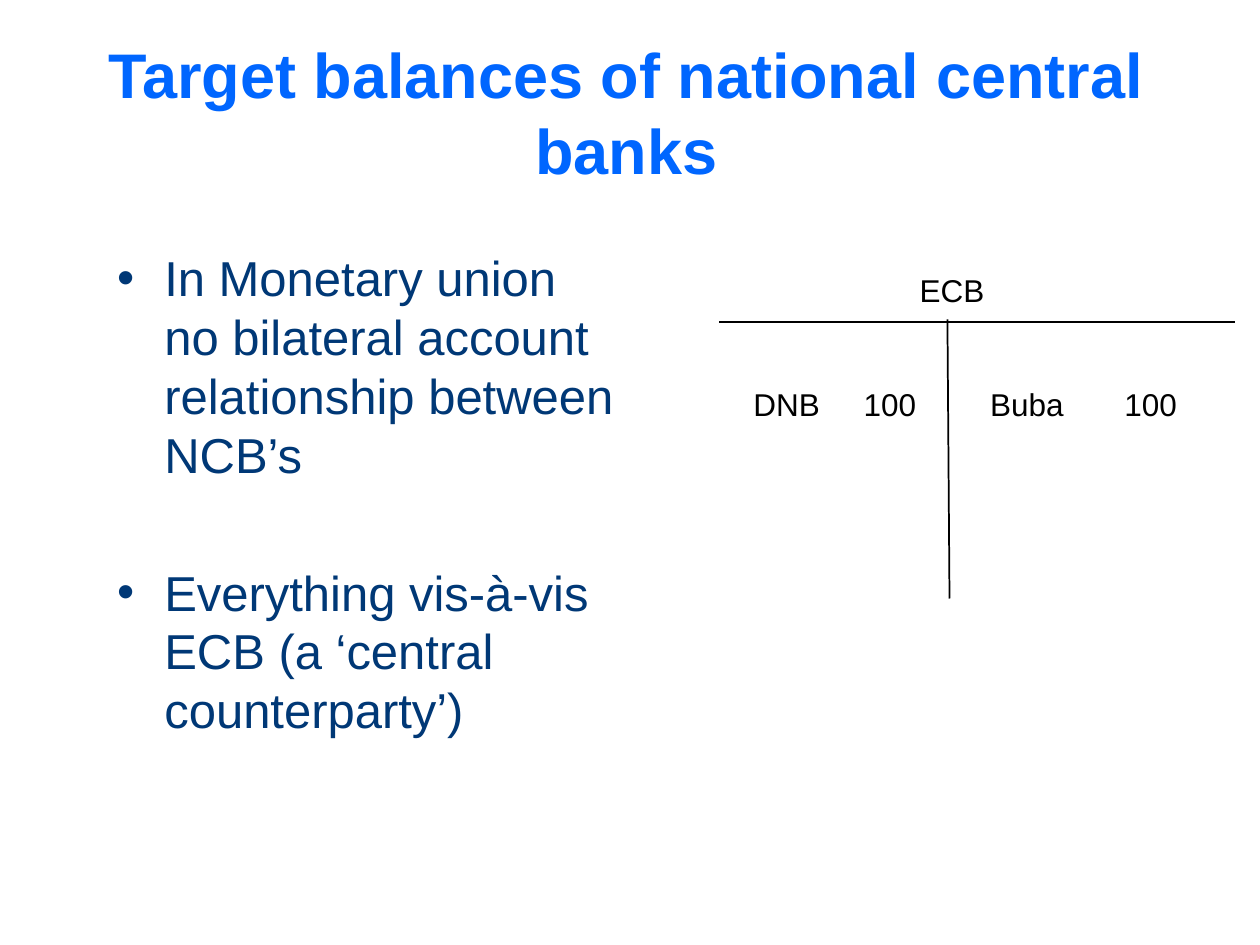
from lxml import etree
from pptx import Presentation
from pptx.dml.color import RGBColor
from pptx.enum import shapes, text
from pptx.oxml import ns
from pptx.util import Pt

COLORS = {"title": "0066FF", "body": "003876", "ink": "000000"}
FONT = "Arial"


def place(shape, left, top, width, height):
    """Set the position and size of a shape in points."""
    shape.left, shape.top = Pt(left), Pt(top)
    shape.width, shape.height = Pt(width), Pt(height)


def add_run(paragraph, words, size, color, bold=False):
    """Append one formatted run to a paragraph."""
    run = paragraph.add_run()
    run.text = words
    run.font.name = FONT
    run.font.size = Pt(size)
    run.font.bold = bold
    run.font.color.rgb = RGBColor.from_string(COLORS[color])


def add_title(slide, words):
    """Fill the title placeholder, keeping its text in the upper part."""
    title = slide.shapes.title
    place(title, 54, 43.2, 607.7, 80.6)
    frame = title.text_frame
    frame.word_wrap = True
    frame.auto_size = text.MSO_AUTO_SIZE.NONE
    frame.vertical_anchor = text.MSO_ANCHOR.MIDDLE
    frame.margin_bottom = Pt(43.2)
    paragraph = frame.paragraphs[0]
    paragraph.alignment = text.PP_ALIGN.CENTER
    add_run(paragraph, words, 36, "title", bold=True)


def add_bullets(slide, items, gap):
    """Add the bulleted list with a gap between its items."""
    box = slide.shapes.add_textbox(Pt(59.8), Pt(138.2), Pt(298), Pt(329))
    frame = box.text_frame
    frame.word_wrap = True
    for index, item in enumerate(items):
        paragraph = frame.add_paragraph() if index else frame.paragraphs[0]
        properties = paragraph._p.get_or_add_pPr()
        properties.set("marL", str(Pt(27)))
        properties.set("indent", str(-Pt(27)))
        if index:
            paragraph.space_before = Pt(gap)
        etree.SubElement(properties, ns.qn("a:buFont"), typeface=FONT)
        etree.SubElement(properties, ns.qn("a:buChar"), char="•")
        add_run(paragraph, item, 28, "body")


def add_line(slide, start, end):
    """Draw a thin black line between two points."""
    line = slide.shapes.add_connector(
        shapes.MSO_CONNECTOR.STRAIGHT, *map(Pt, start + end))
    line.line.color.rgb = RGBColor.from_string(COLORS["ink"])
    line.line.width = Pt(1)
    etree.SubElement(line._element.spPr, ns.qn("a:effectLst"))


def add_label(slide, words, left, top, width, tab=None):
    """Add an account label, with an optional tab stop for its amount."""
    box = slide.shapes.add_textbox(Pt(left), Pt(top), Pt(width), Pt(28.8))
    box.text_frame.word_wrap = True
    paragraph = box.text_frame.paragraphs[0]
    if tab:
        properties = paragraph._p.get_or_add_pPr()
        tabs = etree.SubElement(properties, ns.qn("a:tabLst"))
        etree.SubElement(tabs, ns.qn("a:tab"), pos=str(Pt(tab)), algn="l")
    add_run(paragraph, words, 18, "ink")


def main():
    """Build the slide and save it."""
    presentation = Presentation()
    presentation.slide_width, presentation.slide_height = Pt(720), Pt(540)
    slide = presentation.slides.add_slide(presentation.slide_layouts[5])
    add_title(slide, "Target balances of national central banks")
    add_bullets(slide, [
        "In Monetary union no bilateral account relationship between NCB’s",
        "Everything vis-à-vis ECB (a ‘central counterparty’)",
    ], gap=45)
    add_line(slide, (411, 184), (705.6, 184))
    add_line(slide, (541.4, 182.5), (542.6, 342))
    add_label(slide, "ECB", 518.4, 151.2, 79.2)
    add_label(slide, "Buba\t100", 558.7, 216.7, 147.6, tab=76.7)
    add_label(slide, "DNB\t100", 423.4, 216.7, 118.8, tab=63)
    presentation.save("out.pptx")


if __name__ == "__main__":
    main()
